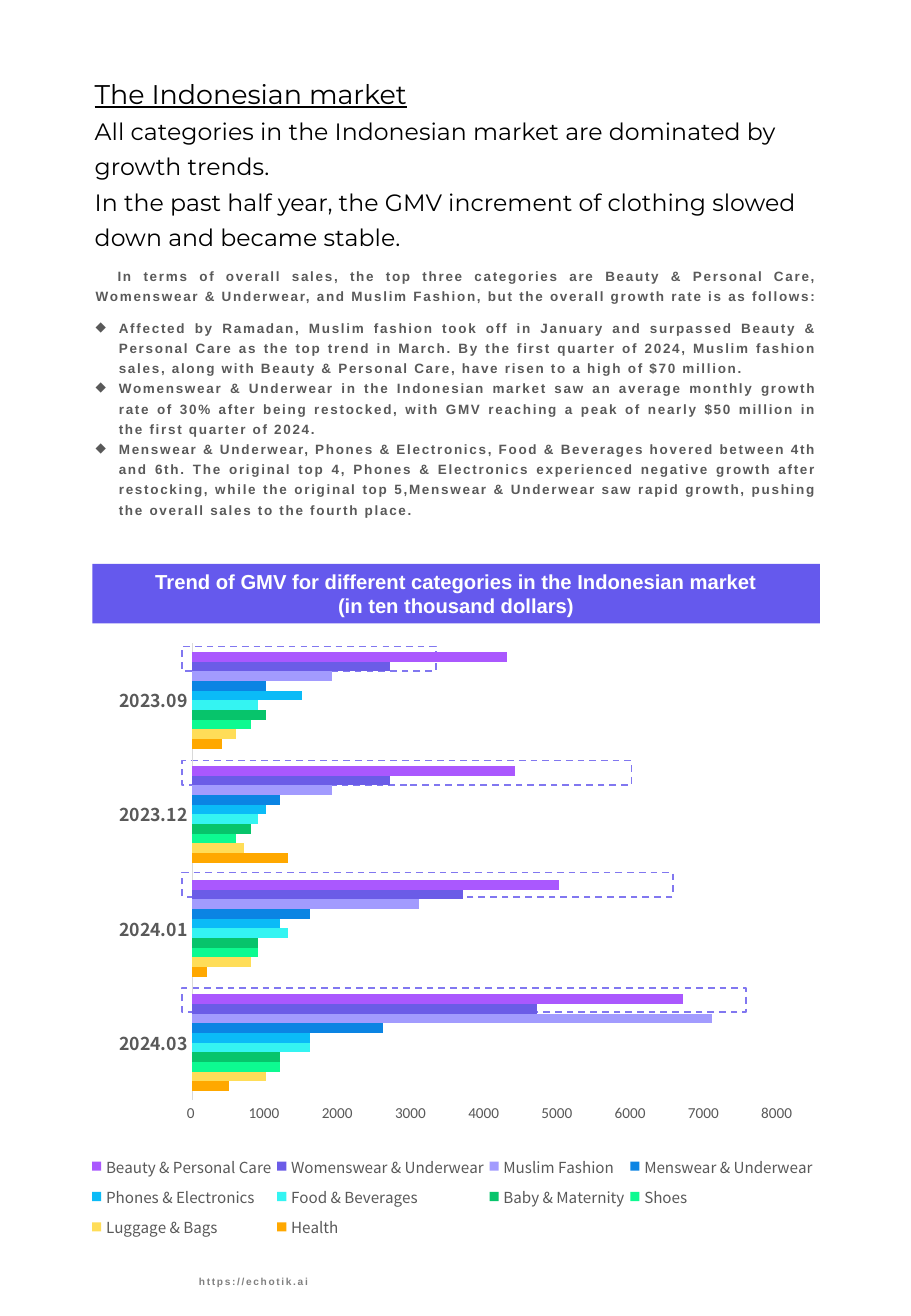
from dataclasses import dataclass
from typing import Any, NamedTuple

import lxml.etree
import pptx
import pptx.chart.data
import pptx.dml.color
import pptx.enum.chart
import pptx.enum.dml
import pptx.enum.shapes
import pptx.enum.text
import pptx.oxml
import pptx.oxml.ns
import pptx.util

EMU_PER_PX = 9144
ALIGN = pptx.enum.text.PP_ALIGN
SHAPES = pptx.enum.shapes.MSO_SHAPE


@dataclass(frozen=True)
class Theme:
    ink: str = "000000"
    body: str = "595959"
    muted: str = "808080"
    white: str = "FFFFFF"
    banner: str = "6559ED"
    frame: str = "8177F0"
    axis: str = "D9D9D9"
    title_size: float = 16
    lead_size: float = 14
    banner_size: float = 12
    body_size: float = 8
    link_size: float = 6
    chart_size: float = 10
    category_size: float = 10.5
    label_size: float = 9
    heading_font: str = "Montserrat"
    body_font: str = "Arial"
    chart_font: str = "Calibri"
    label_font: str = "Noto Sans CJK SC"


THEME = Theme()


class Box(NamedTuple):
    left: int
    top: int
    width: int
    height: int

    def emu(self) -> list[int]:
        return [px(value) for value in self]


class TextStyle(NamedTuple):
    size: float
    font: str
    color: str
    bold: bool = False
    underline: bool = False
    tracking: int = 0


class Line(NamedTuple):
    text: str
    style: TextStyle
    align: Any = ALIGN.LEFT
    spacing: float = 1.0
    margin: int = 0
    indent: int = 0
    bullet: str = ""


class Category(NamedTuple):
    name: str
    color: str
    values: tuple[int, ...]


TITLE = TextStyle(THEME.title_size, THEME.heading_font, THEME.ink, underline=True)
LEAD = TextStyle(THEME.lead_size, THEME.heading_font, THEME.ink)
BODY = TextStyle(THEME.body_size, THEME.body_font, THEME.body, bold=True, tracking=100)
LINK = TextStyle(THEME.link_size, THEME.body_font, THEME.muted, bold=True, tracking=100)
BANNER = TextStyle(THEME.banner_size, THEME.body_font, THEME.white, bold=True)
CHART = TextStyle(THEME.chart_size, THEME.chart_font, THEME.ink)
MONTH = TextStyle(THEME.category_size, THEME.label_font, THEME.body, bold=True)
VALUE = TextStyle(THEME.label_size, THEME.chart_font, THEME.body)
LEGEND = TextStyle(THEME.label_size, THEME.label_font, THEME.body)

HEADING = [
    Line("The Indonesian market", TITLE, spacing=1.25),
    Line("All categories in the Indonesian market are dominated by growth trends.", LEAD, spacing=1.25),
    Line("In the past half year, the GMV increment of clothing slowed down and became stable.", LEAD, spacing=1.25),
]
INTRO = ("In terms of overall sales, the top three categories are Beauty & Personal Care, Womenswear & Underwear, "
         "and Muslim Fashion, but the overall growth rate is as follows:")
FINDINGS = [
    "Affected by Ramadan, Muslim fashion took off in January and surpassed Beauty & Personal Care as the top trend "
    "in March. By the first quarter of 2024, Muslim fashion sales, along with Beauty & Personal Care, have risen to "
    "a high of $70 million.",
    "Womenswear & Underwear in the Indonesian market saw an average monthly growth rate of 30% after being restocked, "
    "with GMV reaching a peak of nearly $50 million in the first quarter of 2024.",
    "Menswear & Underwear, Phones & Electronics, Food & Beverages hovered between 4th and 6th. The original top 4, "
    "Phones & Electronics experienced negative growth after restocking, while the original top 5,Menswear & Underwear "
    "saw rapid growth, pushing the overall sales to the fourth place.",
]
BANNER_LINES = ["Trend of GMV for different categories in the Indonesian market", "(in ten thousand dollars)"]
FRAMES = [Box(150, top, width, 20) for top, width in [(532, 209), (626, 370), (718, 404), (813, 464)]]
MONTHS = ["2024.03", "2024.01", "2023.12", "2023.09"]
CATEGORIES = [
    Category("Health", "FFA800", (500, 200, 1300, 400)),
    Category("Luggage & Bags", "FFDD58", (1000, 800, 700, 600)),
    Category("Shoes", "0DFA91", (1200, 900, 600, 800)),
    Category("Baby & Maternity", "07C46B", (1200, 900, 800, 1000)),
    Category("Food & Beverages", "34F4F2", (1600, 1300, 900, 900)),
    Category("Phones & Electronics", "0BBBF7", (1600, 1200, 1000, 1500)),
    Category("Menswear & Underwear", "0B84E3", (2600, 1600, 1200, 1000)),
    Category("Muslim Fashion", "A29BFE", (7100, 3100, 1900, 1900)),
    Category("Womenswear & Underwear", "6B5CE7", (4700, 3700, 2700, 2700)),
    Category("Beauty & Personal Care", "AA58FE", (6700, 5000, 4400, 4300)),
]


def px(value: int) -> int:
    return value * EMU_PER_PX


def rgb(value: str) -> pptx.dml.color.RGBColor:
    return pptx.dml.color.RGBColor.from_string(value)


def apply(target: Any, values: dict[str, Any]) -> None:
    for name, value in values.items():
        setattr(target, name, value)


def style_font(font: Any, style: TextStyle) -> None:
    apply(font, {"size": pptx.util.Pt(style.size), "name": style.font,
                 "bold": style.bold, "underline": style.underline})
    font.color.rgb = rgb(style.color)


def write_lines(shape: Any, lines: list[Line]) -> None:
    frame = shape.text_frame
    for index, line in enumerate(lines):
        paragraph = frame.add_paragraph() if index else frame.paragraphs[0]
        properties = paragraph._p.get_or_add_pPr()
        properties.set("marL", str(px(line.margin)))
        properties.set("indent", str(px(line.indent)))
        if line.bullet:
            bullet = lxml.etree.SubElement(properties, pptx.oxml.ns.qn("a:buChar"))
            bullet.set("char", line.bullet)
        apply(paragraph, {"alignment": line.align, "line_spacing": line.spacing})
        run = paragraph.add_run()
        run.text = line.text
        style_font(run.font, line.style)
        run._r.get_or_add_rPr().set("spc", str(line.style.tracking))


def place_title(slide: Any, box: Box, lines: list[Line]) -> None:
    title = slide.shapes.title
    apply(title, dict(zip(("left", "top", "width", "height"), box.emu())))
    apply(title.text_frame, {"word_wrap": True, "vertical_anchor": pptx.enum.text.MSO_ANCHOR.TOP,
                             "auto_size": pptx.enum.text.MSO_AUTO_SIZE.SHAPE_TO_FIT_TEXT})
    write_lines(title, lines)


def add_text(slide: Any, box: Box, lines: list[Line]) -> None:
    shape = slide.shapes.add_textbox(*box.emu())
    apply(shape.text_frame, {"word_wrap": True, "auto_size": pptx.enum.text.MSO_AUTO_SIZE.SHAPE_TO_FIT_TEXT})
    write_lines(shape, lines)


def add_banner(slide: Any, box: Box, lines: list[Line]) -> None:
    shape = slide.shapes.add_shape(SHAPES.ROUNDED_RECTANGLE, *box.emu())
    shape.adjustments[0] = 0
    shape.shadow.inherit = False
    shape.fill.solid()
    shape.fill.fore_color.rgb = rgb(THEME.banner)
    shape.line.fill.background()
    shape.text_frame.vertical_anchor = pptx.enum.text.MSO_ANCHOR.MIDDLE
    write_lines(shape, lines)


def add_frame(slide: Any, box: Box) -> None:
    shape = slide.shapes.add_shape(SHAPES.RECTANGLE, *box.emu())
    shape.shadow.inherit = False
    shape.fill.background()
    shape.line.color.rgb = rgb(THEME.frame)
    apply(shape.line, {"width": pptx.util.Pt(1), "dash_style": pptx.enum.dml.MSO_LINE.DASH})


def set_layout(element: Any, index: int, values: dict[str, Any]) -> None:
    for previous in element.findall(pptx.oxml.ns.qn("c:layout")):
        element.remove(previous)
    layout = pptx.oxml.parse_xml(f'<c:layout {pptx.oxml.ns.nsdecls("c")}><c:manualLayout/></c:layout>')
    for name, value in values.items():
        lxml.etree.SubElement(layout[0], pptx.oxml.ns.qn(f"c:{name}")).set("val", str(value))
    element.insert(index, layout)


def add_gmv_chart(slide: Any, box: Box) -> None:
    data = pptx.chart.data.CategoryChartData()
    data.categories = MONTHS
    for category in CATEGORIES:
        data.add_series(category.name, category.values)
    chart = slide.shapes.add_chart(pptx.enum.chart.XL_CHART_TYPE.BAR_CLUSTERED, *box.emu(), data).chart
    apply(chart, {"has_title": False, "has_legend": True})
    style_font(chart.font, CHART)
    plot = chart.plots[0]
    apply(plot, {"gap_width": 182, "overlap": 0, "vary_by_categories": False})
    for series, category in zip(plot.series, CATEGORIES):
        series.format.fill.solid()
        series.format.fill.fore_color.rgb = rgb(category.color)
    for axis, style in ((chart.category_axis, MONTH), (chart.value_axis, VALUE)):
        apply(axis, {"has_major_gridlines": False, "major_tick_mark": pptx.enum.chart.XL_TICK_MARK.NONE,
                     "minor_tick_mark": pptx.enum.chart.XL_TICK_MARK.NONE})
        style_font(axis.tick_labels.font, style)
    chart.category_axis.format.line.color.rgb = rgb(THEME.axis)
    chart.category_axis.format.line.width = pptx.util.Pt(0.75)
    chart.value_axis.format.line.fill.background()
    apply(chart.value_axis, {"minimum_scale": 0, "maximum_scale": 8000, "major_unit": 1000})
    apply(chart.value_axis.tick_labels, {"number_format": "0_ ", "number_format_is_linked": False})
    apply(chart.legend, {"position": pptx.enum.chart.XL_LEGEND_POSITION.BOTTOM, "include_in_layout": False})
    style_font(chart.legend.font, LEGEND)
    edges = {"xMode": "edge", "yMode": "edge"}
    plot_area = chart._chartSpace.chart.plotArea
    set_layout(plot_area, 0, {"layoutTarget": "inner", **edges, "x": 0.145, "y": 0.024, "w": 0.8, "h": 0.731})
    set_layout(chart.legend._element, 1, {**edges, "x": 0, "y": 0.83, "w": 1, "h": 0.16})


def main() -> None:
    presentation = pptx.Presentation()
    apply(presentation, {"slide_width": px(750), "slide_height": px(1083)})
    slide = presentation.slides.add_slide(presentation.slide_layouts.get_by_name("Title Only"))
    add_text(slide, Box(154, 1045, 134, 20), [Line("https://echotik.ai", LINK, ALIGN.JUSTIFY)])
    place_title(slide, Box(68, 52, 614, 159), HEADING)
    add_text(slide, Box(69, 212, 614, 42), [Line(INTRO, BODY, ALIGN.JUSTIFY, 1.25, indent=18)])
    add_text(slide, Box(69, 255, 614, 177),
             [Line(text, BODY, ALIGN.JUSTIFY, 1.25, 19, -19, "◆") for text in FINDINGS])
    add_banner(slide, Box(76, 464, 599, 49), [Line(text, BANNER, ALIGN.CENTER) for text in BANNER_LINES])
    for frame in FRAMES:
        add_frame(slide, frame)
    add_gmv_chart(slide, Box(71, 517, 603, 514))
    presentation.save("out.pptx")


if __name__ == "__main__":
    main()
